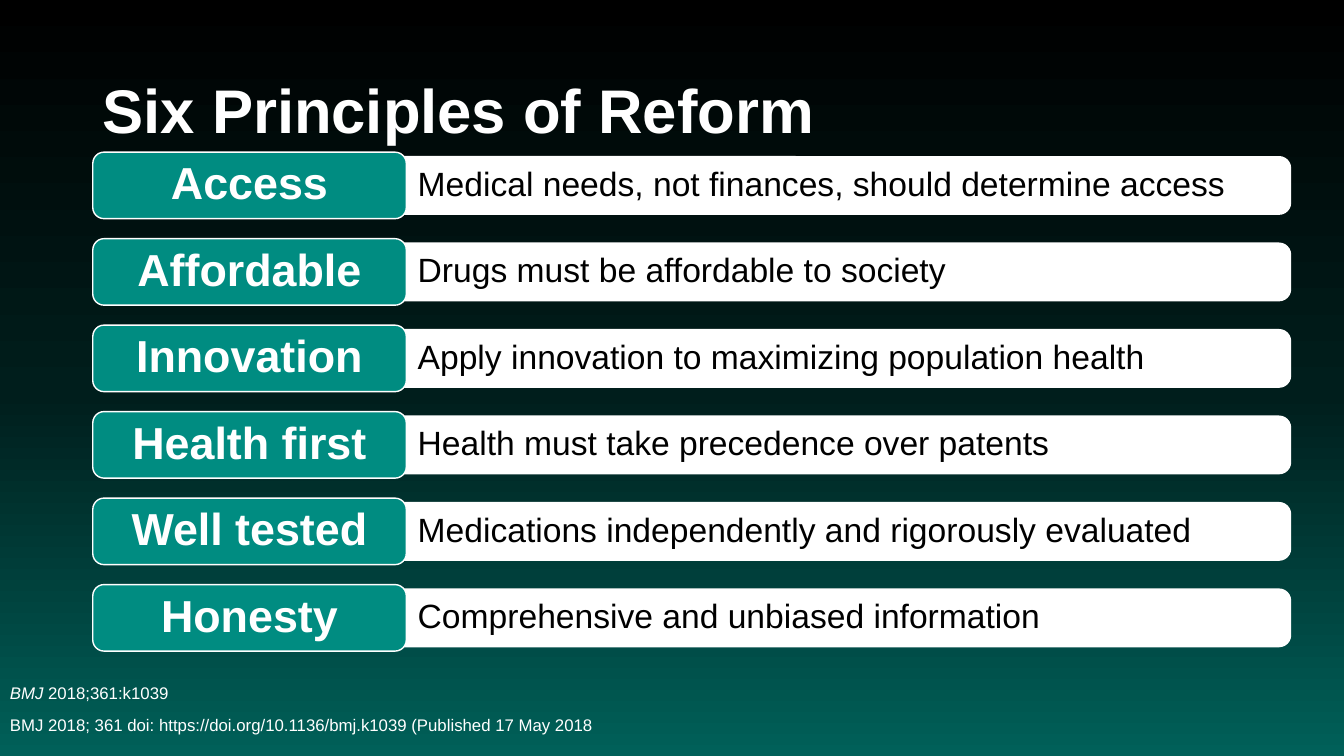
import copy

import pptx
import pptx.dml.color
import pptx.enum.shapes
import pptx.enum.text
import pptx.oxml.ns
import pptx.util

Inches = pptx.util.Inches
ALIGN = pptx.enum.text.PP_ALIGN

TITLE = "Six Principles of Reform"
PRINCIPLES = [
    ("Access", "Medical needs, not finances, should determine access"),
    ("Affordable", "Drugs must be affordable to society"),
    ("Innovation", "Apply innovation to maximizing population health"),
    ("Health first", "Health must take precedence over patents"),
    ("Well tested", "Medications independently and rigorously evaluated"),
    ("Honesty", "Comprehensive and unbiased information"),
]
JOURNAL = "BMJ"
CITATIONS = [
    " 2018;361:k1039",
    "BMJ 2018; 361 doi: https://doi.org/10.1136/bmj.k1039 (Published 17 May 2018",
]
COLORS = {"white": "FFFFFF", "black": "000000", "teal": "008C81"}
BACKDROP = [(0, "000000"), (0.52, "001E1C"), (1, "006059")]

FIRST_TOP, PITCH = 1.51, 0.858
LABEL_LEFT, LABEL_WIDTH, LABEL_HEIGHT = 0.92, 3.11, 0.66
BAR_LEFT, BAR_WIDTH, BAR_HEIGHT = 3.84, 8.96, 0.57


def rgb(value):
    return pptx.dml.color.RGBColor.from_string(value)


def style_paragraph(paragraph, size, color, bold=False, align=ALIGN.LEFT):
    paragraph.alignment = align
    paragraph.line_spacing = 0.9
    for run in paragraph.runs:
        run.font.name = "Arial"
        run.font.size = pptx.util.Pt(size)
        run.font.bold = bold
        run.font.color.rgb = rgb(COLORS[color])


def prepare_frame(frame):
    frame.word_wrap = True
    frame.vertical_anchor = pptx.enum.text.MSO_ANCHOR.MIDDLE
    return frame


def add_text_area(slide, left, top, width, height):
    area = slide.shapes.add_textbox(*map(Inches, (left, top, width, height)))
    return prepare_frame(area.text_frame)


def add_panel(slide, box, corner, fill, text, margins, **style):
    panel = slide.shapes.add_shape(
        pptx.enum.shapes.MSO_SHAPE.ROUNDED_RECTANGLE, *map(Inches, box))
    panel.adjustments[0] = corner
    panel.shadow.inherit = False
    panel.fill.solid()
    panel.fill.fore_color.rgb = rgb(COLORS[fill])
    panel.line.color.rgb = rgb(COLORS["white"])
    panel.line.width = pptx.util.Pt(1)
    frame = prepare_frame(panel.text_frame)
    frame.margin_left, frame.margin_right = map(Inches, margins)
    frame.text = text
    style_paragraph(frame.paragraphs[0], **style)


def paint_backdrop(slide):
    fill = slide.background.fill
    fill.gradient()
    fill.gradient_angle = 270
    stop_list = slide.element.find(".//" + pptx.oxml.ns.qn("a:gsLst"))
    stop_list.insert(1, copy.deepcopy(stop_list[0]))
    for stop, (position, color) in zip(fill.gradient_stops, BACKDROP):
        stop.position = position
        stop.color.rgb = rgb(color)


def main():
    deck = pptx.Presentation()
    deck.slide_width, deck.slide_height = Inches(13.33), Inches(7.5)
    slide = deck.slides.add_slide(deck.slide_layouts[6])
    paint_backdrop(slide)

    title = add_text_area(slide, 0.92, 0.4, 11.5, 1.45)
    title.text = TITLE
    style_paragraph(title.paragraphs[0], 44, "white", bold=True)

    citation = add_text_area(slide, 0, 6.58, 9, 0.92)
    journal_line = citation.paragraphs[0]
    for text, italic in ((JOURNAL, True), (CITATIONS[0], False)):
        run = journal_line.add_run()
        run.text = text
        run.font.italic = italic
    doi_line = citation.add_paragraph()
    doi_line.text = CITATIONS[1]
    doi_line.space_before = pptx.util.Pt(10)
    for line in citation.paragraphs:
        style_paragraph(line, 12, "white")

    for row, (principle, meaning) in enumerate(PRINCIPLES):
        top = FIRST_TOP + row * PITCH
        bar_top = top + (LABEL_HEIGHT - BAR_HEIGHT) / 2
        add_panel(slide, (BAR_LEFT, bar_top, BAR_WIDTH, BAR_HEIGHT), 0.2,
                  "white", meaning, (0.27, 0.1), size=24, color="black")
        add_panel(slide, (LABEL_LEFT, top, LABEL_WIDTH, LABEL_HEIGHT), 0.17,
                  "teal", principle, (0.2, 0.2), size=32, color="white",
                  bold=True, align=ALIGN.CENTER)

    deck.save("out.pptx")


if __name__ == "__main__":
    main()
